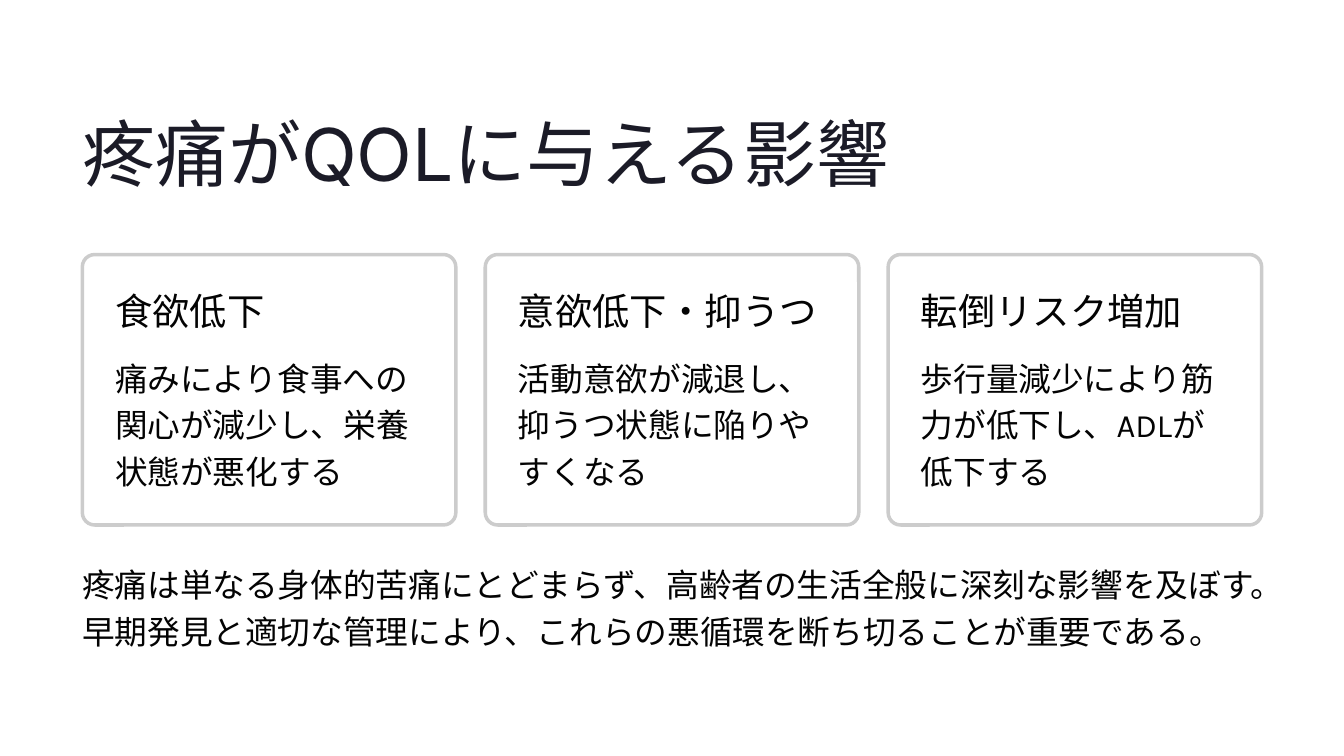
from pptx import Presentation
from pptx.dml.color import RGBColor
from pptx.enum.shapes import MSO_SHAPE
from pptx.enum.text import MSO_ANCHOR, MSO_AUTO_SIZE, PP_ALIGN
from pptx.util import Inches, Pt

ROUNDED = MSO_SHAPE.ROUNDED_RECTANGLE
TOP = MSO_ANCHOR.TOP
NO_FIT = MSO_AUTO_SIZE.NONE
LEFT = PP_ALIGN.LEFT

COLORS = {"title": "1B1B27", "text": "030303", "card": "FFFFFF", "border": "CCCCCC"}
STYLES = {
    "title": ("Inter", 62.5, 78.5, "title", True),
    "heading": ("Inter", 32, 39, "text", False),
    "body": ("Karla", 28, 40, "text", True),
}

WIDTH, HEIGHT = 16, 9
MARGIN = 0.98
CONTENT_W = WIDTH - 2 * MARGIN
GAP = 0.35
PADDING = 0.39

TITLE = "疼痛がQOLに与える影響"
CARDS = [
    ("食欲低下", "痛みにより食事への関心が減少し、栄養状態が悪化する"),
    ("意欲低下・抑うつ", "活動意欲が減退し、抑うつ状態に陥りやすくなる"),
    ("転倒リスク増加", "歩行量減少により筋力が低下し、ADLが低下する"),
]
SUMMARY = (
    "疼痛は単なる身体的苦痛にとどまらず、高齢者の生活全般に深刻な影響を及ぼす。"
    "早期発見と適切な管理により、これらの悪循環を断ち切ることが重要である。"
)


def color(name):
    return RGBColor.from_string(COLORS[name])


def write(sp, text, style):
    font, size, spacing, tint, wrap = STYLES[style]
    tf = sp.text_frame
    tf.text = text
    tf.auto_size = NO_FIT
    tf.word_wrap = wrap
    tf.vertical_anchor = TOP
    tf.margin_left = tf.margin_right = tf.margin_top = tf.margin_bottom = 0
    p = tf.paragraphs[0]
    p.alignment = LEFT
    p.line_spacing = Pt(spacing)
    r = p.runs[0]
    r.font.name = font
    r.font.size = Pt(size)
    r.font.color.rgb = color(tint)


def add_text(s, box, text, style):
    write(s.shapes.add_textbox(*map(Inches, box)), text, style)


def add_title(s, box, text):
    sp = s.shapes.title
    sp.left, sp.top, sp.width, sp.height = map(Inches, box)
    write(sp, text, "title")


def add_card(s, box, heading, body):
    x, y, w, h = box
    sp = s.shapes.add_shape(ROUNDED, *map(Inches, box))
    sp.adjustments[0] = 0.046
    sp.shadow.inherit = False
    sp.fill.solid()
    sp.fill.fore_color.rgb = color("card")
    sp.line.color.rgb = color("border")
    sp.line.width = Pt(3)
    inner_x, inner_w = x + PADDING, w - 2 * PADDING
    add_text(s, (inner_x, y + PADDING, inner_w, 0.55), heading, "heading")
    add_text(s, (inner_x, y + 1.15, inner_w, h - 1.15 - PADDING), body, "body")


def add_cards(s, box, cards):
    x, y, w, h = box
    card_w = (w - GAP * (len(cards) - 1)) / len(cards)
    for i, (heading, body) in enumerate(cards):
        add_card(s, (x + i * (card_w + GAP), y, card_w, h), heading, body)


def main():
    prs = Presentation()
    prs.slide_width, prs.slide_height = Inches(WIDTH), Inches(HEIGHT)
    s = prs.slides.add_slide(prs.slide_layouts.get_by_name("Title Only"))
    add_title(s, (MARGIN, 1.24, CONTENT_W, 1.09), TITLE)
    add_cards(s, (MARGIN, 3.03, CONTENT_W, 3.22), CARDS)
    add_text(s, (MARGIN, 6.64, CONTENT_W, 1.12), SUMMARY, "body")
    prs.save("out.pptx")


if __name__ == "__main__":
    main()
